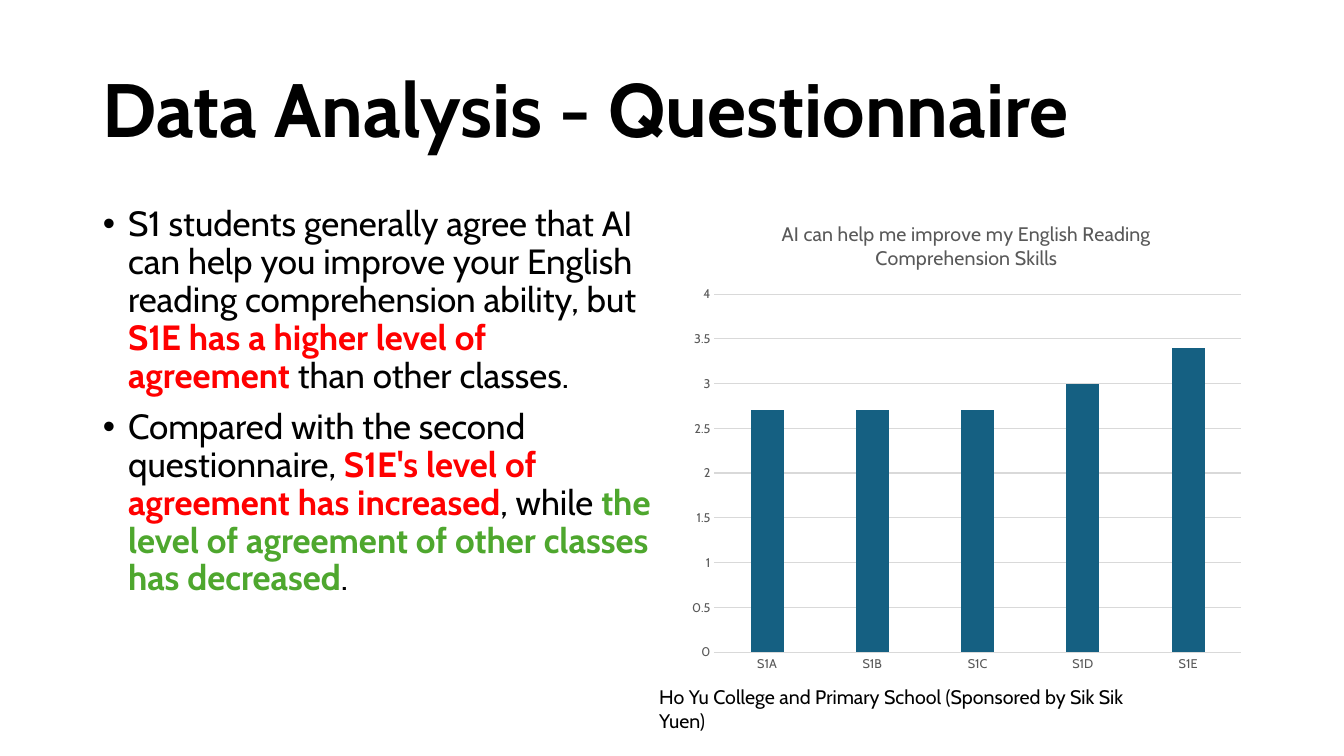
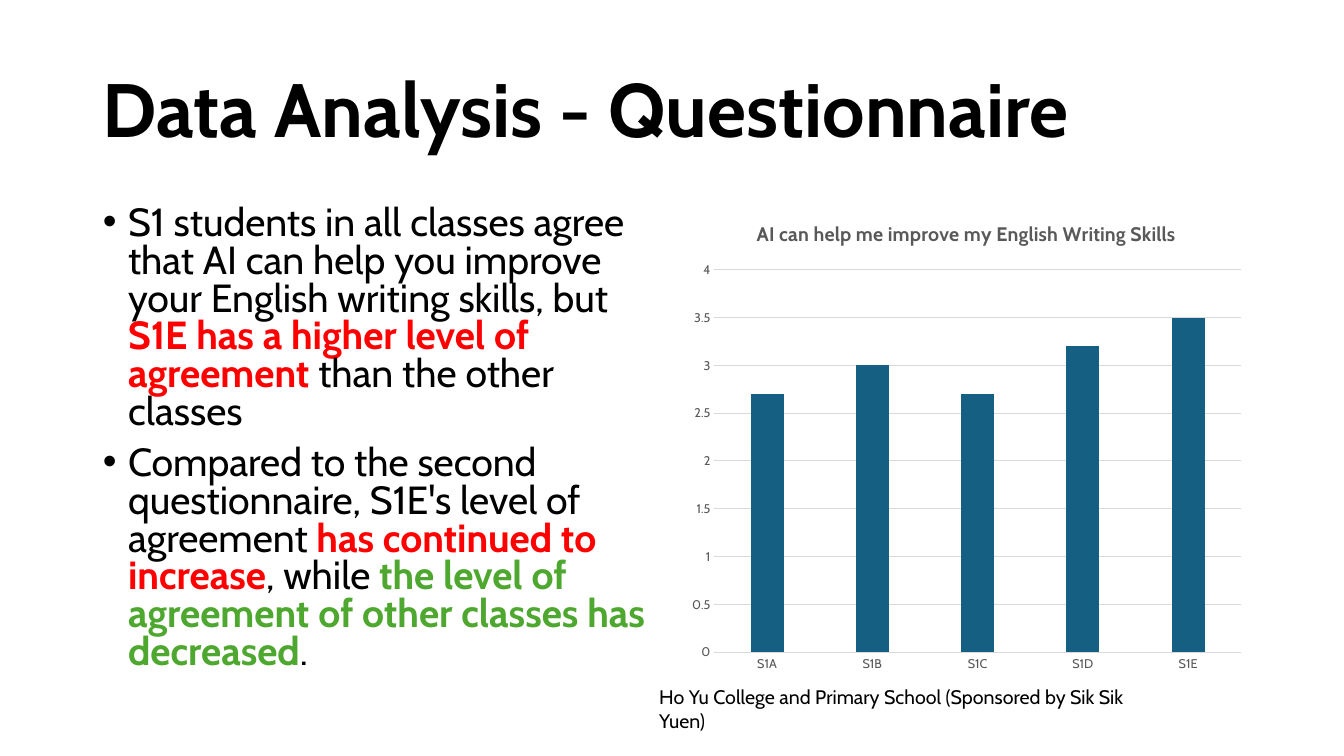
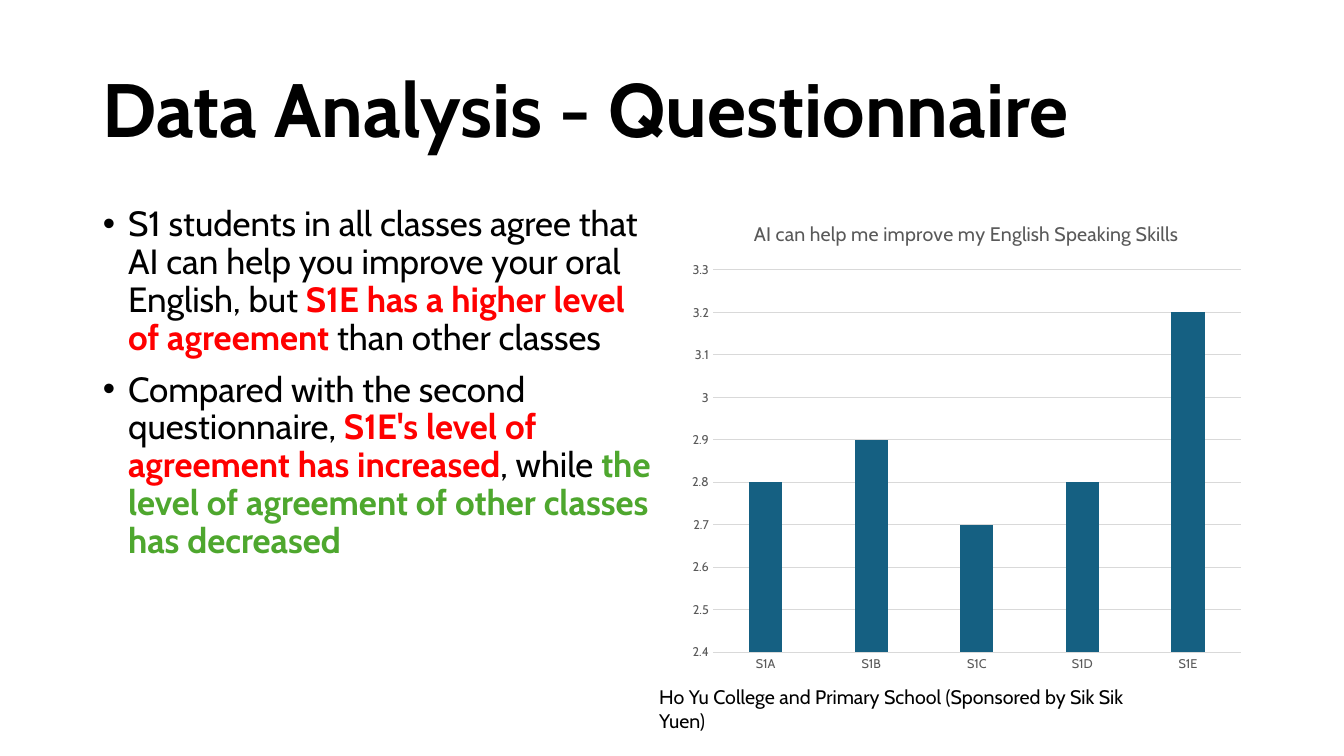
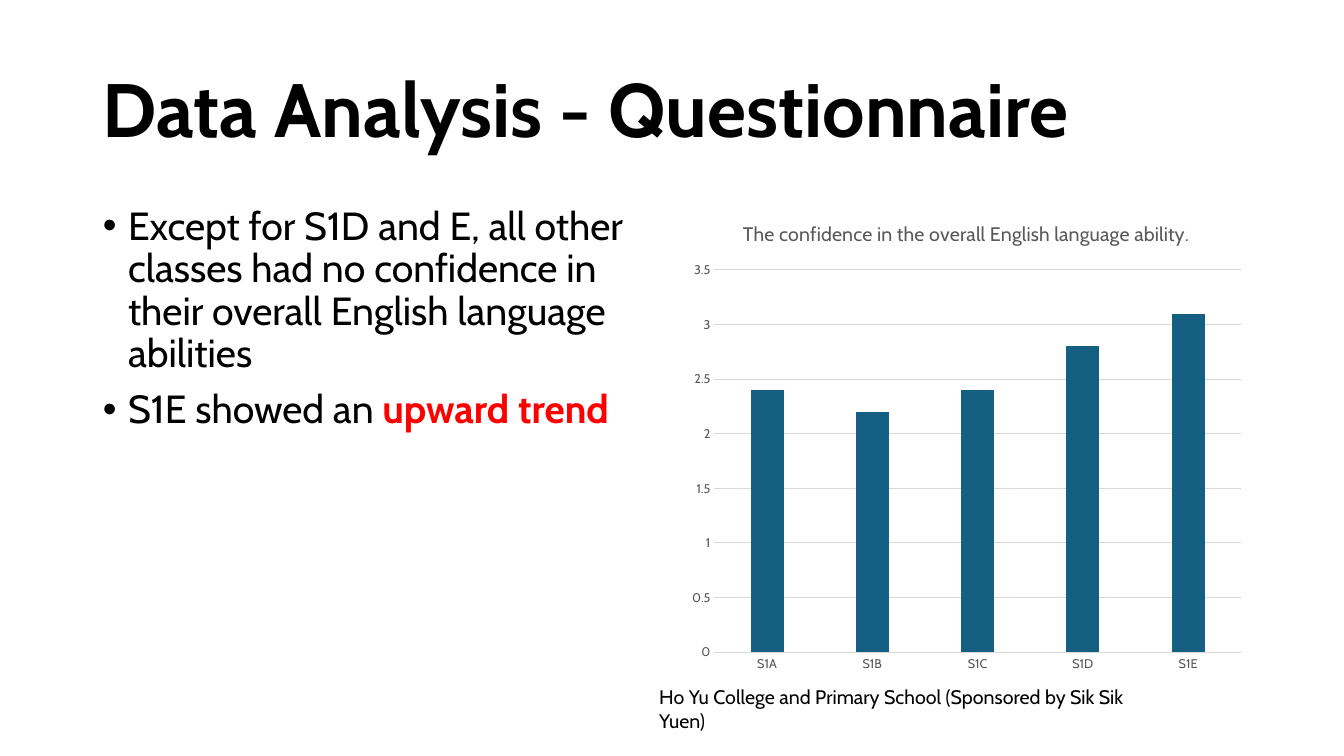
from dataclasses import dataclass

import pptx
import pptx.chart.data
import pptx.dml.color
import pptx.enum.chart
import pptx.enum.text
import pptx.util
from lxml import etree
from pptx.oxml.ns import qn

Inches = pptx.util.Inches
Pt = pptx.util.Pt


@dataclass(frozen=True)
class Theme:
    font: str = "Cabin"
    ink: str = "000000"
    rise: str = "FF0000"
    fall: str = "4EA72E"
    bar: str = "156082"
    label: str = "595959"
    grid: str = "D9D9D9"
    title_size: int = 54
    caption_size: int = 14
    chart_size: int = 10
    axis_size: int = 9


THEME = Theme()
TITLE = "Data Analysis - Questionnaire"
SCHOOL = "Ho Yu College and Primary School (Sponsored by Sik Sik Yuen)"
CLASSES = ["S1A", "S1B", "S1C", "S1D", "S1E"]

TITLE_AREA = (0.92, 0.4, 11.5, 1.45)
FINDINGS_AREA = (0.92, 2, 5.67, 4.76)
CHART_AREA = (6.75, 2, 5.67, 4.76)
SCHOOL_AREA = (6.44, 6.75, 5.1, 0.34)

# A finding is a list of runs: plain text, or (text, colour) for bold emphasis.
HIGHER = ("S1E has a higher level of agreement ", THEME.rise)
OTHERS_FELL = ("the level of agreement of other classes has decreased", THEME.fall)
S1E_ROSE = [
    "Compared with the second questionnaire, ",
    ("S1E's level of agreement has increased", THEME.rise),
    ", while ",
    OTHERS_FELL,
]

QUESTIONS = [
    dict(
        findings=[
            ["S1 students generally agree that AI can help you improve your English "
             "reading comprehension ability, but ", HIGHER, "than other classes."],
            S1E_ROSE + ["."],
        ],
        size=25,
        question="AI can help me improve my English Reading Comprehension Skills",
        scores=[2.7, 2.7, 2.7, 3, 3.4],
        scale=(0, 4, 0.5),
    ),
    dict(
        findings=[
            ["S1 students in all classes agree that AI can help you improve your "
             "English writing skills, but ", HIGHER, "than the other classes"],
            ["Compared to the second questionnaire, S1E's level of agreement ",
             ("has continued to increase", THEME.rise), ", while ", OTHERS_FELL, "."],
        ],
        size=28,
        line_spacing=0.8,
        question="AI can help me improve my English Writing Skills",
        question_bold=True,
        scores=[2.7, 3, 2.7, 3.2, 3.5],
        scale=(0, 4, 0.5),
    ),
    dict(
        findings=[
            ["S1 students in all classes agree that AI can help you improve your "
             "oral English, but ", HIGHER, "than other classes"],
            S1E_ROSE,
        ],
        size=25,
        question="AI can help me improve my English Speaking Skills",
        scores=[2.8, 2.9, 2.7, 2.8, 3.2],
        scale=(2.4, 3.3, 0.1),
    ),
    dict(
        findings=[
            ["Except for S1D and E, all other classes had no confidence in their "
             "overall English language abilities"],
            ["S1E showed an ", ("upward trend", THEME.rise)],
        ],
        size=28,
        question="The confidence in the overall English language ability.",
        scores=[2.4, 2.2, 2.4, 2.8, 3.1],
        scale=(0, 3.5, 0.5),
    ),
]


def rgb(colour):
    return pptx.dml.color.RGBColor.from_string(colour)


def inches(area):
    return [Inches(length) for length in area]


def place(shape, area):
    shape.left, shape.top, shape.width, shape.height = inches(area)


def style_font(font, size, colour=THEME.ink, bold=False):
    font.name = THEME.font
    font.size = Pt(size)
    font.bold = bold
    font.color.rgb = rgb(colour)


def add_text(paragraph, text, *, size, colour=THEME.ink, bold=False):
    run = paragraph.add_run()
    run.text = text
    style_font(run.font, size, colour, bold)


def add_bullet(paragraph):
    properties = paragraph._p.get_or_add_pPr()
    properties.set("marL", str(Inches(0.25)))
    properties.set("indent", str(Inches(-0.25)))
    etree.SubElement(properties, qn("a:buFont")).set("typeface", "Arial")
    etree.SubElement(properties, qn("a:buChar")).set("char", "•")


def prepare_layout(layout):
    """Give the title and list placeholders their shared place and anchoring."""
    title, findings = layout.placeholders[0], layout.placeholders[1]
    place(title, TITLE_AREA)
    place(findings, FINDINGS_AREA)
    title.text_frame.vertical_anchor = pptx.enum.text.MSO_ANCHOR.MIDDLE
    for placeholder in (title, findings):
        placeholder.text_frame.auto_size = pptx.enum.text.MSO_AUTO_SIZE.NONE


def add_school_to_layout(slide):
    """Write the school name and hand it to the layout, so every slide shows it."""
    school = slide.shapes.add_textbox(*inches(SCHOOL_AREA))
    school.text_frame.word_wrap = True
    add_text(school.text_frame.paragraphs[0], SCHOOL, size=THEME.caption_size)
    slide.slide_layout.shapes.element.append(school.element)


def write_title(slide):
    paragraph = slide.shapes.title.text_frame.paragraphs[0]
    paragraph.alignment = pptx.enum.text.PP_ALIGN.LEFT
    paragraph.line_spacing = 0.9
    add_text(paragraph, TITLE, size=THEME.title_size, bold=True)


def write_findings(slide, findings, size, line_spacing):
    frame = slide.placeholders[1].text_frame
    for index, finding in enumerate(findings):
        paragraph = frame.add_paragraph() if index else frame.paragraphs[0]
        paragraph.line_spacing = line_spacing
        paragraph.space_before = Pt(10 if index else 0)
        add_bullet(paragraph)
        for part in finding:
            if isinstance(part, str):
                add_text(paragraph, part, size=size)
            else:
                text, colour = part
                add_text(paragraph, text, size=size, colour=colour, bold=True)


def style_axis(axis):
    axis.major_tick_mark = axis.minor_tick_mark = pptx.enum.chart.XL_TICK_MARK.NONE
    style_font(axis.tick_labels.font, THEME.axis_size, THEME.label)


def style_grid_line(line):
    line.color.rgb = rgb(THEME.grid)
    line.width = Pt(0.75)


def add_score_chart(slide, question, scores, scale, question_bold):
    data = pptx.chart.data.CategoryChartData()
    data.categories = CLASSES
    data.add_series("Series 1", scores)
    chart = slide.shapes.add_chart(
        pptx.enum.chart.XL_CHART_TYPE.COLUMN_CLUSTERED, *inches(CHART_AREA), data
    ).chart
    style_font(chart.font, THEME.chart_size)
    chart.has_legend = False
    add_text(chart.chart_title.text_frame.paragraphs[0], question,
             size=THEME.caption_size, colour=THEME.label, bold=question_bold)
    chart.chart_title.include_in_layout = False

    bars = chart.plots[0]
    bars.gap_width = 219
    bars.overlap = -27
    bars.vary_by_categories = False
    bars.series[0].format.fill.solid()
    bars.series[0].format.fill.fore_color.rgb = rgb(THEME.bar)

    classes, values = chart.category_axis, chart.value_axis
    style_axis(classes)
    style_grid_line(classes.format.line)
    style_axis(values)
    values.format.line.fill.background()
    style_grid_line(values.major_gridlines.format.line)
    values.minimum_scale, values.maximum_scale, values.major_unit = scale


def add_question_slide(deck, layout, *, findings, size, question, scores, scale,
                       line_spacing=0.9, question_bold=False):
    slide = deck.slides.add_slide(layout)
    write_title(slide)
    write_findings(slide, findings, size, line_spacing)
    add_score_chart(slide, question, scores, scale, question_bold)
    return slide


def main():
    deck = pptx.Presentation()
    deck.slide_width, deck.slide_height = Inches(13.33), Inches(7.5)
    layout = deck.slide_layouts.get_by_name("Title and Content")
    prepare_layout(layout)
    slides = [add_question_slide(deck, layout, **content) for content in QUESTIONS]
    add_school_to_layout(slides[0])
    deck.save("out.pptx")


if __name__ == "__main__":
    main()
